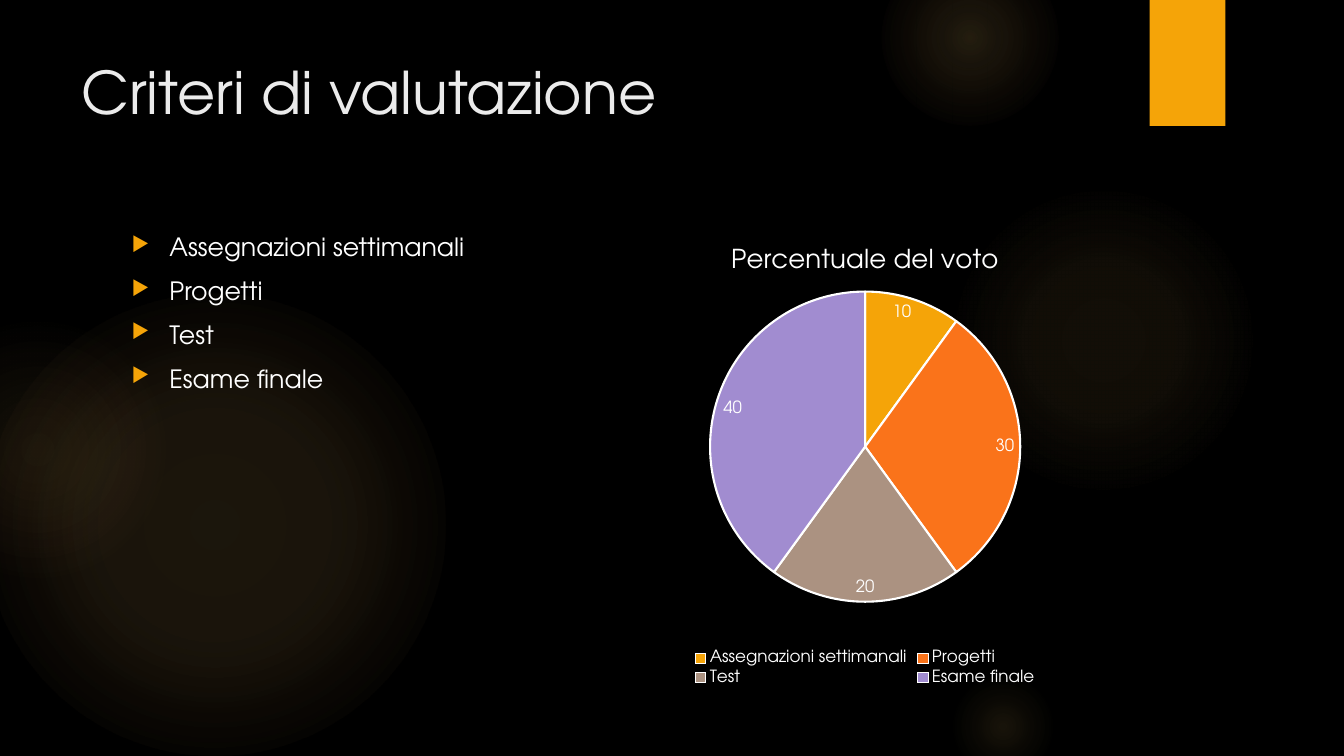
from pptx import Presentation
from pptx import util as u
from pptx.chart.data import CategoryChartData
from pptx.dml.color import RGBColor
from pptx.enum import chart as ch, shapes, text
from pptx.oxml import parse_xml
from pptx.oxml.ns import nsdecls, qn

PX = 9525
FONT = "TeX Gyre Adventor"
HEX = {"back": "000000", "title": "EBEBEB", "text": "FFFFFF",
       "gold": "F5A408", "glow": "FAC96A", "rose": "F59B74",
       "orange": "FA731A", "taupe": "AB9281", "violet": "A18CD0"}


def box(*sizes):
    """Turn px lengths into EMU."""
    return [size * PX for size in sizes]


def style(font, size, color):
    font.name = FONT
    font.size = u.Pt(size)
    font.bold = False
    font.color.rgb = RGBColor.from_string(HEX[color])


prs = Presentation()
prs.slide_width, prs.slide_height = box(1280, 720)
slide = prs.slides.add_slide(prs.slide_layouts[5])
slide.background.fill.solid()
slide.background.fill.fore_color.rgb = RGBColor.from_string(HEX["back"])

# Soft glows: left, top, diameter, then (stop %, colour, opacity %)
glows = [
    (-16, 280, 440, [(0, "glow", 11), (36, "glow", 10), (75, "glow", 0)]),
    (-88, 304, 248, [(0, "glow", 8), (36, "glow", 5), (71, "rose", 0)]),
    (903, 176, 296, [(0, "glow", 7), (36, "glow", 6), (69, "glow", 0)]),
    (840, -48, 168, [(0, "glow", 14), (36, "glow", 7), (73, "glow", 0)]),
    (903, 640, 104, [(0, "glow", 10), (31, "glow", 5), (66, "glow", 0)]),
]
for left, top, size, stops in glows:
    glow = slide.shapes.add_shape(shapes.MSO_SHAPE.OVAL, *box(left, top, size, size))
    glow.shadow.inherit = False
    glow.line.fill.background()
    glow.fill.background()
    marks = "".join(
        f'<a:gs pos="{pos * 1000}"><a:srgbClr val="{HEX[color]}">'
        f'<a:alpha val="{alpha * 1000}"/></a:srgbClr></a:gs>'
        for pos, color, alpha in stops)
    props = glow._element.spPr
    props.replace(props.find(qn("a:noFill")), parse_xml(
        f'<a:gradFill {nsdecls("a")}><a:gsLst>{marks}</a:gsLst><a:path path="circle">'
        '<a:fillToRect l="50000" t="50000" r="50000" b="50000"/></a:path></a:gradFill>'))

# Ribbon
ribbon = slide.shapes.add_shape(shapes.MSO_SHAPE.RECTANGLE, *box(1095, 0, 72, 120))
ribbon.fill.solid()
ribbon.fill.fore_color.rgb = RGBColor.from_string(HEX["gold"])
ribbon.line.fill.background()
ribbon.shadow.inherit = False
ribbon._element.spPr.find(qn("a:effectLst")).append(parse_xml(
    f'<a:outerShdw {nsdecls("a")} blurRad="38100" dist="25400" dir="5400000">'
    f'<a:srgbClr val="{HEX["back"]}"><a:alpha val="45000"/></a:srgbClr></a:outerShdw>'))

# Title
title = slide.shapes.title
title.left, title.top, title.width, title.height = box(68, 48, 988, 147)
frame = title.text_frame
frame.text = "Criteri di valutazione"
frame.vertical_anchor = text.MSO_ANCHOR.TOP
frame.auto_size = text.MSO_AUTO_SIZE.NONE
frame.paragraphs[0].alignment = text.PP_ALIGN.LEFT
style(frame.paragraphs[0].font, 42, "title")

# Criteria: name, percentage, colour
items = [("Assegnazioni settimanali", 10, "gold"), ("Progetti", 30, "orange"),
         ("Test", 20, "taupe"), ("Esame finale", 40, "violet")]
names, marks, colors = zip(*items)

frame = slide.shapes.add_textbox(*box(116, 216, 462, 441)).text_frame
frame.word_wrap = True
frame.text = "\n".join(names)
for para in frame.paragraphs:
    style(para.font, 18, "text")
    para.space_before = u.Pt(3.6)
    para.space_after = u.Pt(6)
    props = para._p.get_or_add_pPr()
    props.set("marL", str(36 * PX))
    props.set("indent", str(-36 * PX))
    bullet = (f'<a:buClr {nsdecls("a")}><a:srgbClr val="{HEX["gold"]}"/></a:buClr>',
              f'<a:buSzPct {nsdecls("a")} val="80000"/>',
              f'<a:buChar {nsdecls("a")} char="▶"/>')
    for part in bullet:
        props.find(qn("a:defRPr")).addprevious(parse_xml(part))

# Pie
data = CategoryChartData()
data.categories = names
data.add_series("Percentuale del voto", marks)
pie = slide.shapes.add_chart(ch.XL_CHART_TYPE.PIE, *box(593, 216, 462, 441), data).chart
style(pie.font, 10, "text")
pie.has_title = True
head = pie.chart_title.text_frame
head.text = "Percentuale del voto"
style(head.paragraphs[0].font, 18.6, "text")
pie.has_legend = True
pie.legend.position = ch.XL_LEGEND_POSITION.BOTTOM
pie.legend.include_in_layout = False
style(pie.legend.font, 12, "text")

plot = pie.plots[0]
plot.vary_by_categories = True
plot.has_data_labels = True
labels = plot.data_labels
labels.show_value = True
labels.show_percentage = False
labels.position = ch.XL_LABEL_POSITION.INSIDE_END
style(labels.font, 12, "text")
for index, color in enumerate(colors):
    slice_ = plot.series[0].points[index].format
    slice_.fill.solid()
    slice_.fill.fore_color.rgb = RGBColor.from_string(HEX[color])
    slice_.line.color.rgb = RGBColor.from_string(HEX["text"])
    slice_.line.width = u.Pt(1.5)

area = pie._chartSpace.chart.plotArea
for old in area.findall(qn("c:layout")):
    area.remove(old)
place = "".join(f'<c:{key} val="{val}"/>' for key, val in [
    ("layoutTarget", "inner"), ("xMode", "edge"), ("yMode", "edge"),
    ("x", 0.18), ("y", 0.14), ("w", 0.64), ("h", 0.67)])
area.insert(0, parse_xml(
    f'<c:layout {nsdecls("c")}><c:manualLayout>{place}</c:manualLayout></c:layout>'))

prs.save("out.pptx")
